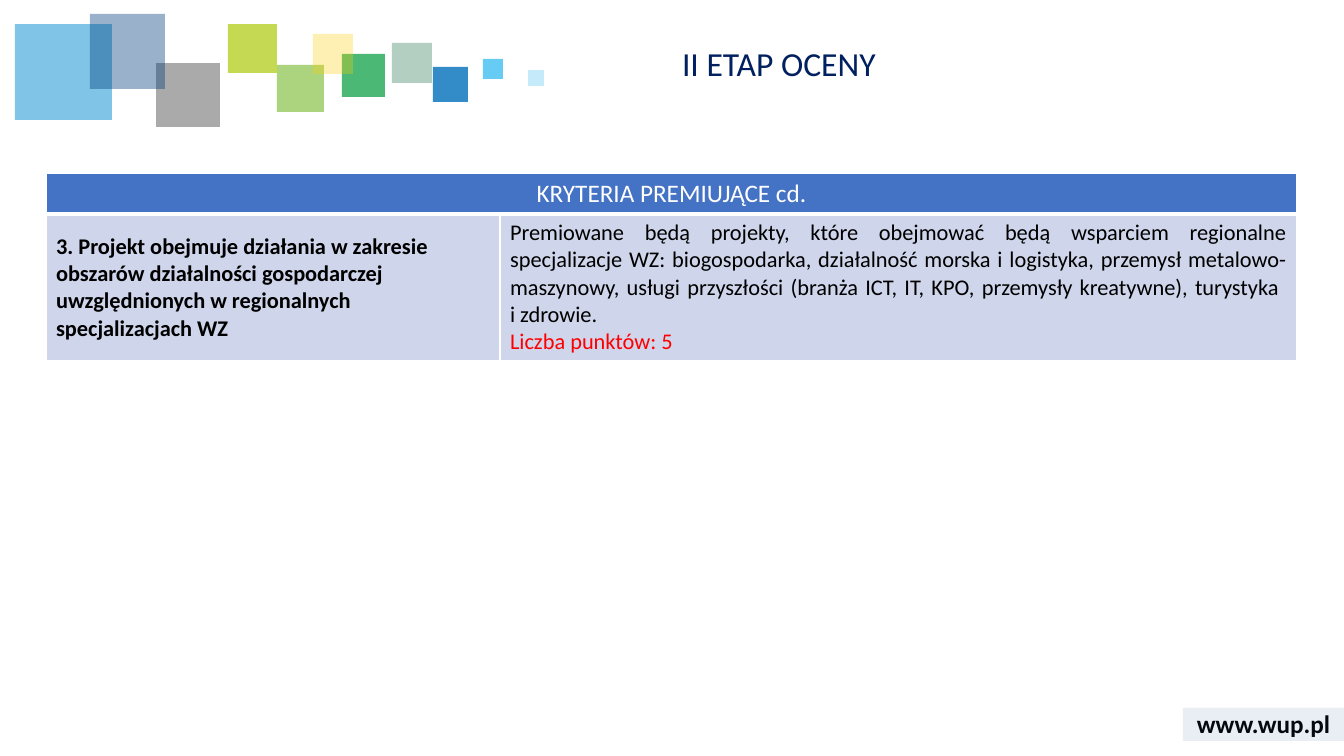
from lxml import etree
from pptx import Presentation
from pptx.dml.color import RGBColor
from pptx.enum.shapes import MSO_SHAPE
from pptx.enum.text import MSO_ANCHOR, PP_ALIGN
from pptx.oxml.ns import qn
from pptx.util import Emu, Pt

RECTANGLE = MSO_SHAPE.RECTANGLE
TOP, MIDDLE = MSO_ANCHOR.TOP, MSO_ANCHOR.MIDDLE
LEFT, CENTER, JUSTIFY = PP_ALIGN.LEFT, PP_ALIGN.CENTER, PP_ALIGN.JUSTIFY

PX = 914400 / 100.8
FONT = "Calibri"
TITLE_LAYOUT = 5

BLACK = RGBColor(0x00, 0x00, 0x00)
WHITE = RGBColor(0xFF, 0xFF, 0xFF)
RED = RGBColor(0xFF, 0x00, 0x00)
NAVY = RGBColor(0x00, 0x20, 0x60)
HEADER_BLUE = RGBColor(0x44, 0x72, 0xC4)
ROW_BLUE = RGBColor(0xCF, 0xD5, 0xEA)
BAND_BLUE = RGBColor(0x2F, 0x55, 0x97)
PINE = RGBColor(0x00, 0x61, 0x38)
BLUE = RGBColor(0x00, 0x6E, 0xB9)
GREEN = RGBColor(0x00, 0x9A, 0x3C)
AZURE = RGBColor(0x02, 0x8B, 0xD3)
LEAF = RGBColor(0x75, 0xB8, 0x2A)
GRAY = RGBColor(0x57, 0x57, 0x57)
DEEP_BLUE = RGBColor(0x00, 0x3D, 0x7C)
SKY = RGBColor(0x40, 0xC0, 0xF1)
LIME = RGBColor(0xAF, 0xCA, 0x0B)
YELLOW = RGBColor(0xFE, 0xD0, 0x00)

# left, top, width, height, colour, opacity in percent
SQUARES = [
    (392, 43, 40, 40, PINE, 30),
    (433, 67, 35, 35, BLUE, 80),
    (342, 54, 43, 43, GREEN, 70),
    (15, 24, 97, 96, AZURE, 50),
    (277, 65, 47, 47, LEAF, 60),
    (156, 63, 64, 64, GRAY, 50),
    (90, 14, 75, 75, DEEP_BLUE, 40),
    (483, 59, 20, 20, SKY, 80),
    (228, 24, 49, 49, LIME, 70),
    (313, 34, 40, 40, YELLOW, 30),
    (528, 70, 16, 16, SKY, 30),
]

CRITERION = (
    "3. Projekt obejmuje działania w zakresie obszarów działalności "
    "gospodarczej uwzględnionych w regionalnych specjalizacjach WZ"
)
DESCRIPTION = (
    "Premiowane będą projekty, które obejmować będą wsparciem regionalne "
    "specjalizacje WZ: biogospodarka, działalność morska i logistyka, "
    "przemysł metalowo-maszynowy, usługi przyszłości (branża ICT, IT, KPO, "
    "przemysły kreatywne), turystyka \vi zdrowie."
)


def px(*lengths):
    return [Emu(round(length * PX)) for length in lengths]


def write(para, text, size=16, color=BLACK, bold=False, align=LEFT, spacing=1.0):
    para.text = text
    para.alignment = align
    para.line_spacing = spacing
    for span in para.runs:
        span.font.name = FONT
        span.font.size = Pt(size)
        span.font.bold = bold
        span.font.color.rgb = color


def add_tint(page, left, top, width, height, color, opacity):
    box = page.shapes.add_shape(RECTANGLE, *px(left, top, width, height))
    box.shadow.inherit = False
    box.line.fill.background()
    box.fill.solid()
    box.fill.fore_color.rgb = color
    color_node = box.fill._xPr.find(qn("a:solidFill"))[0]
    etree.SubElement(color_node, qn("a:alpha"), val=str(opacity * 1000))


def add_address(page, text):
    box = page.shapes.add_textbox(*px(1183, 703, 161, 40))
    box.text_frame.word_wrap = True
    box.text_frame.vertical_anchor = MIDDLE
    write(box.text_frame.paragraphs[0], text, size=18, bold=True, align=CENTER)


def set_title(page, text):
    title = page.shapes.title
    title.left, title.top, title.width, title.height = px(672, 42, 641, 55)
    title.text_frame.vertical_anchor = TOP
    write(title.text_frame.paragraphs[0], text, size=24, color=NAVY, spacing=0.9)


def format_cell(cell, fill, anchor=TOP, bottom=1):
    properties = cell._tc.get_or_add_tcPr()
    for side, points in (("L", 1), ("R", 1), ("T", 1), ("B", bottom)):
        border = etree.SubElement(properties, qn("a:ln" + side), w=str(Pt(points)))
        paint = etree.SubElement(border, qn("a:solidFill"))
        etree.SubElement(paint, qn("a:srgbClr"), val=str(WHITE))
    cell.fill.solid()
    cell.fill.fore_color.rgb = fill
    cell.vertical_anchor = anchor


def add_criteria(page):
    table = page.shapes.add_table(2, 2, *px(46, 173, 1251, 188)).table
    for column, width in zip(table.columns, px(454, 797)):
        column.width = width
    for row, height in zip(table.rows, px(41, 147)):
        row.height = height

    # Header across both columns
    header = table.cell(0, 0)
    header.merge(table.cell(0, 1))
    for cell in table.rows[0].cells:
        format_cell(cell, HEADER_BLUE, bottom=3)
    write(header.text_frame.paragraphs[0], "KRYTERIA PREMIUJĄCE cd.",
          size=18, color=WHITE, align=CENTER)

    # Criterion and its description
    criterion, description = table.rows[1].cells
    format_cell(criterion, ROW_BLUE, MIDDLE)
    write(criterion.text_frame.paragraphs[0], CRITERION, bold=True)
    format_cell(description, ROW_BLUE)
    write(description.text_frame.paragraphs[0], DESCRIPTION, align=JUSTIFY)
    write(description.text_frame.add_paragraph(), "Liczba punktów: 5",
          color=RED, align=JUSTIFY)


def main():
    deck = Presentation()
    deck.slide_width, deck.slide_height = px(1344, 756)
    page = deck.slides.add_slide(deck.slide_layouts[TITLE_LAYOUT])

    # Decoration and web address
    add_address(page, "www.wup.pl")
    for square in SQUARES:
        add_tint(page, *square)
    add_tint(page, 1183, 708, 161, 33, BAND_BLUE, 10)

    # Content
    add_criteria(page)
    set_title(page, "II ETAP OCENY")
    deck.save("out.pptx")


if __name__ == "__main__":
    main()
